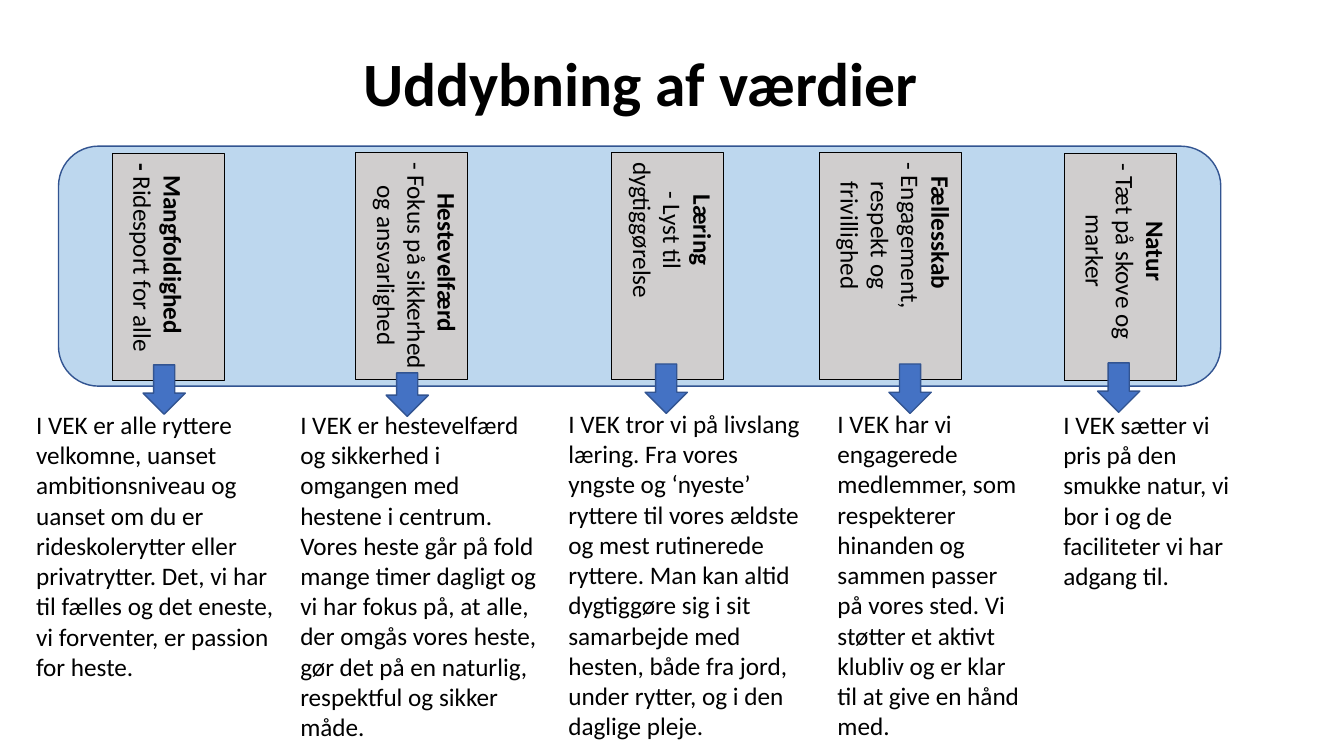
from pptx import Presentation
from pptx import util as u
from pptx.dml.color import RGBColor
from pptx.enum import shapes, text

VALUES = [
    ("Mangfoldighed ", [("- ", True), ("Ridesport for alle", False)],
     "I VEK er alle ryttere velkomne, uanset ambitionsniveau og uanset om du er "
     "rideskolerytter eller privatrytter. Det, vi har til fælles og det eneste, "
     "vi forventer, er passion for heste.",
     (80.6, 109.4, 80), (18.7, 288.7, 189.4, 204), (102.2, 260.6, 35.3), 25.6),
    ("Hestevelfærd ", [("- Fokus på sikkerhed og ansvarlighed", False)],
     "I VEK er hestevelfærd og sikkerhed i omgangen med hestene i centrum. "
     "Vores heste går på fold mange timer dagligt og vi har fokus på, at alle, "
     "der omgås vores heste, gør det på en naturlig, respektful og sikker måde.",
     (254.2, 108.7, 80), (207.4, 288.7, 184.3, 247), (275.8, 266.4, 31), 3.6),
    ("Læring", [("- Lyst til dygtiggørelse", False)],
     "I VEK tror vi på livslang læring. Fra vores yngste og ‘nyeste’ ryttere til "
     "vores ældste og mest rutinerede ryttere. Man kan altid dygtiggøre sig i sit "
     "samarbejde med hesten, både fra jord, under rytter, og i den daglige pleje.",
     (437, 108.7, 80), (398.9, 288, 184.3, 247), (460.8, 260, 35.3), 3.6),
    ("Fællesskab ", [("- Engagement, respekt og frivillighed", False)],
     "I VEK har vi engagerede medlemmer, som respekterer hinanden og sammen passer "
     "på vores sted. Vi støtter et aktivt klubliv og er klar til at give en hånd med.",
     (585.4, 108.7, 101.5), (591.1, 288, 145.4, 247), (635, 260, 35.3), 3.6),
    ("Natur", [("- Tæt på skove og marker", False)],
     "I VEK sætter vi pris på den smukke natur, vi bor i og de faciliteter vi har "
     "adgang til.",
     (760.3, 109.4, 80), (752.4, 288.7, 145.4, 138), (784, 259.2, 35.3), 3.6),
]


def color(code):
    return RGBColor.from_string(code)


class Deck:
    font, ink, edge = "Calibri", "000000", "325491"

    def __init__(self, slide):
        self.slide = slide

    def shape(self, kind, area, fill, edge, width):
        item = self.slide.shapes.add_shape(kind, *map(u.Pt, area))
        item.shadow.inherit = False
        item.fill.solid()
        item.fill.fore_color.rgb = color(fill)
        item.line.color.rgb = color(edge)
        item.line.width = u.Pt(width)
        return item

    def fill(self, frame, lines, size, align):
        frame.word_wrap = True
        for i, runs in enumerate(lines):
            para = frame.add_paragraph() if i else frame.paragraphs[0]
            para.alignment = align
            for words, bold in runs:
                run = para.add_run()
                run.text = words
                run.font.name = self.font
                run.font.size = u.Pt(size)
                run.font.bold = bold
                run.font.color.rgb = color(self.ink)

    def text(self, area, words, size=18, bold=False, align=text.PP_ALIGN.LEFT):
        frame = self.slide.shapes.add_textbox(*map(u.Pt, area)).text_frame
        self.fill(frame, [[(words, bold)]], size, align)
        return frame

    def title(self, area, words):
        frame = self.text(area, words, 44, True, text.PP_ALIGN.CENTER)
        frame.vertical_anchor = text.MSO_ANCHOR.MIDDLE
        frame.paragraphs[0].line_spacing = 0.9

    def band(self, area):
        self.shape(shapes.MSO_SHAPE.ROUNDED_RECTANGLE, area, "BDD7EE", self.edge, 1)

    def card(self, area, lines, inset):
        item = self.shape(shapes.MSO_SHAPE.RECTANGLE, area, "D0CECE", self.ink, 0.75)
        frame = item.text_frame
        self.fill(frame, lines, 18, text.PP_ALIGN.CENTER)
        frame.vertical_anchor = text.MSO_ANCHOR.TOP
        frame.auto_size = text.MSO_AUTO_SIZE.SHAPE_TO_FIT_TEXT
        frame.margin_right = u.Pt(inset)
        frame._txBody.bodyPr.set("vert", "eaVert")

    def arrow(self, area):
        self.shape(shapes.MSO_SHAPE.DOWN_ARROW, area, "4472C4", self.edge, 1)


def main():
    show = Presentation()
    show.slide_width, show.slide_height = u.Pt(960), u.Pt(540)
    deck = Deck(show.slides.add_slide(show.slide_layouts[6]))
    deck.title((13, 9.4, 889.2, 104.4), "Uddybning af værdier")
    deck.band((41.8, 104.4, 830.2, 171.4))
    for name, motto, body, card, note, arrow, inset in VALUES:
        deck.card((*card, 162.7), [[(name, True)], motto], inset)
        deck.text(note, body)
        left, top, height = arrow
        deck.arrow((left, top, 30.2, height))
    show.save("out.pptx")


if __name__ == "__main__":
    main()
